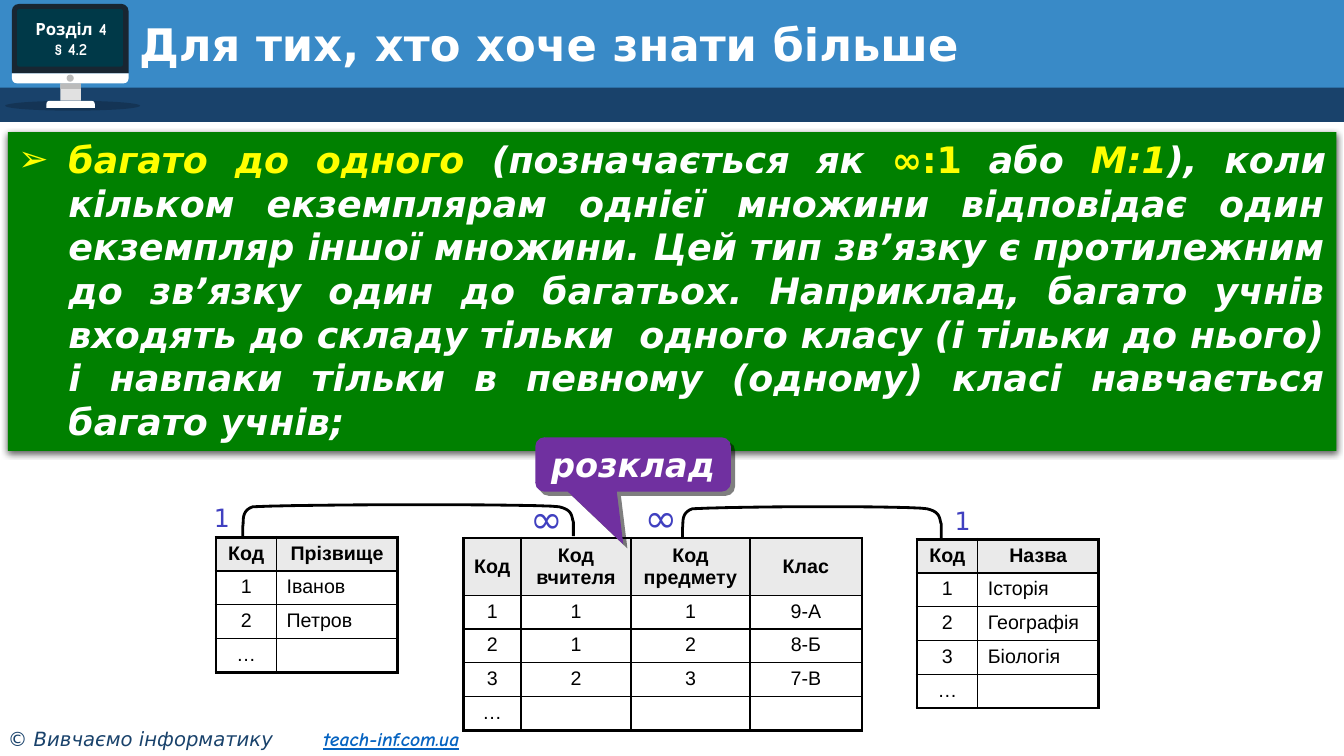
import dataclasses

import lxml.etree
import pptx
import pptx.dml.color
import pptx.enum.shapes
import pptx.enum.text
import pptx.oxml.ns
import pptx.util

Cm, Pt = pptx.util.Cm, pptx.util.Pt
RGB = pptx.dml.color.RGBColor.from_string
SHAPE = pptx.enum.shapes.MSO_SHAPE
ALIGN = pptx.enum.text.PP_ALIGN
ANCHOR = pptx.enum.text.MSO_ANCHOR
qn = pptx.oxml.ns.qn
SubElement = lxml.etree.SubElement


@dataclasses.dataclass(frozen=True)
class Theme:
    face: str = "DejaVu Sans"
    comic: str = "Comic Neue"
    table_face: str = "Arial"
    black: str = "000000"
    white: str = "FFFFFF"
    sky: str = "398AC7"
    navy: str = "19426B"
    casing: str = "182632"
    screen: str = "003948"
    metal: str = "E1E1E1"
    grey: str = "BBBBBB"
    link: str = "0563C1"
    green: str = "008000"
    yellow: str = "FFFF00"
    purple: str = "7030A0"
    mark: str = "4040C0"
    header: str = "EAEAEA"
    title_size: int = 32
    body_size: int = 26
    callout_size: int = 24
    infinity_size: int = 28
    one_size: int = 18
    small_size: int = 14
    badge_size: int = 12


theme = Theme()


def add_panel(parent, preset, left, top, width, height, color):
    shape = parent.shapes.add_shape(preset, Cm(left), Cm(top), Cm(width), Cm(height))
    shape.shadow.inherit = False
    shape.fill.solid()
    shape.fill.fore_color.rgb = RGB(color)
    shape.line.fill.background()
    return shape


def set_font(font, face, size, color, bold=False, italic=False):
    font.name, font.size, font.bold, font.italic = face, Pt(size), bold, italic
    font.color.rgb = RGB(color)


presentation = pptx.Presentation()
presentation.slide_width, presentation.slide_height = Cm(33.87), Cm(19.05)
slide = presentation.slides.add_slide(presentation.slide_layouts[1])
title, body = slide.placeholders[0], slide.placeholders[1]

# Header bands
add_panel(slide, SHAPE.RECTANGLE, 0, 0, 33.87, 2.31, theme.sky)
add_panel(slide, SHAPE.RECTANGLE, 0, 2.21, 33.87, 0.86, theme.navy)

# Monitor with the section number
monitor = slide.shapes.add_group_shape()
floor_shadow = add_panel(monitor, SHAPE.OVAL, 0.13, 2.54, 3.4, 0.25, theme.black)
SubElement(floor_shadow.element.spPr.find(".//" + qn("a:srgbClr")), qn("a:alpha"), val="20000")
case = add_panel(monitor, SHAPE.ROUND_2_SAME_RECTANGLE, 0.3, 0.1, 2.94, 1.75, theme.casing)
case.adjustments[0] = 0.1
chin = add_panel(monitor, SHAPE.ROUND_2_SAME_RECTANGLE, 0.3, 1.85, 2.94, 0.25, theme.white)
chin.adjustments[0] = 0.5
chin.rotation = 180
add_panel(monitor, SHAPE.RECTANGLE, 1.52, 2.1, 0.52, 0.44, theme.metal)
add_panel(monitor, SHAPE.RECTANGLE, 1.52, 2.1, 0.52, 0.14, theme.grey)
add_panel(monitor, SHAPE.ROUND_2_SAME_RECTANGLE, 1.17, 2.54, 1.22, 0.18, theme.white).adjustments[0] = 0.45
add_panel(monitor, SHAPE.OVAL, 1.68, 1.88, 0.18, 0.18, theme.grey)
add_panel(monitor, SHAPE.ROUNDED_RECTANGLE, 0.43, 0.23, 2.67, 1.45, theme.screen).adjustments[0] = 0.04

badge = slide.shapes.add_textbox(Cm(0.33), Cm(0.23), Cm(2.92), Cm(1.5)).text_frame
badge.word_wrap = True
badge.vertical_anchor = ANCHOR.MIDDLE
badge.text = "Розділ 4\n§ 4.2"
for paragraph in badge.paragraphs:
    paragraph.alignment = ALIGN.CENTER
    set_font(paragraph.font, theme.comic, theme.badge_size, theme.white, bold=True)

# Footer
footer = slide.shapes.add_textbox(Cm(0), Cm(18.19), Cm(13.23), Cm(0.86)).text_frame
footer.word_wrap = True
footer.margin_left = Cm(0.2)
paragraph = footer.paragraphs[0]
tabs = SubElement(paragraph._p.get_or_add_pPr(), qn("a:tabLst"))
SubElement(tabs, qn("a:tab"), pos=str(Cm(7.95)), algn="l")
run = paragraph.add_run()
run.text = "© Вивчаємо інформатику\t"
set_font(run.font, theme.face, theme.small_size, theme.navy, italic=True)
run = paragraph.add_run()
run.text = "teach-inf.com.ua"
set_font(run.font, theme.comic, theme.small_size, theme.link, bold=True, italic=True)
run.font.underline = True

# Title and definition, placed above the header bands
for placeholder, box in ((title, (3.25, 0.46, 29.77, 1.47)), (body, (0.2, 3.33, 33.48, 8.03))):
    slide.shapes.element.append(placeholder.element)
    placeholder.left, placeholder.top, placeholder.width, placeholder.height = map(Cm, box)
    placeholder.text_frame.auto_size = pptx.enum.text.MSO_AUTO_SIZE.NONE
    placeholder.text_frame.word_wrap = True

title.text_frame.text = "Для тих, хто хоче знати більше"
title.text_frame.vertical_anchor = ANCHOR.MIDDLE
paragraph = title.text_frame.paragraphs[0]
paragraph.alignment = ALIGN.LEFT
paragraph.line_spacing = 0.9
set_font(paragraph.font, theme.face, theme.title_size, theme.white, bold=True)

body.fill.solid()
body.fill.fore_color.rgb = RGB(theme.green)
body.text_frame.vertical_anchor = ANCHOR.TOP
paragraph = body.text_frame.paragraphs[0]
properties = paragraph._p.get_or_add_pPr()
properties.set("marL", str(Cm(1.27)))
properties.set("indent", str(-Cm(1.27)))
SubElement(properties, qn("a:buChar"), char="➢")
paragraph.alignment = ALIGN.JUSTIFY
paragraph.space_before = Pt(0)
for text, color, italic in (
    ("багато до одного ", theme.yellow, True),
    ("(позначається як ", theme.white, True),
    ("∞:1", theme.yellow, False),
    (" або ", theme.white, True),
    ("М:1", theme.yellow, True),
    ("), коли кільком екземплярам однієї множини відповідає один екземпляр іншої множини. "
     "Цей тип зв’язку є протилежним до зв’язку один до багатьох. Наприклад, багато учнів "
     "входять до складу тільки  одного класу (і тільки до нього) і навпаки тільки в певному "
     "(одному) класі навчається багато учнів;", theme.white, True),
):
    run = paragraph.add_run()
    run.text = text
    set_font(run.font, theme.face, theme.body_size, color, bold=True, italic=italic)

# Tables: thick outer frame, thin inner lines
row_height = 0.85
teachers = [("Код", "Прізвище"), ("1", "Іванов"), ("2", "Петров"), ("…", "")]
subjects = [("Код", "Назва"), ("1", "Історія"), ("2", "Географія"), ("3", "Біологія"), ("…", "")]
timetable = [("Код", "Код вчителя", "Код предмету", "Клас"), ("1", "1", "1", "9-А"),
             ("2", "1", "2", "8-Б"), ("3", "2", "3", "7-В"), ("…", "", "", "")]
for rows, left, top, widths, header_height in (
    (teachers, 5.44, 13.54, (1.53, 3.05), row_height),
    (subjects, 23.11, 13.59, (1.53, 3.05), row_height),
    (timetable, 11.68, 13.56, (1.45, 2.77, 3, 2.82), 1.44),
):
    last_row, last_column = len(rows) - 1, len(widths) - 1
    table = slide.shapes.add_table(len(rows), len(widths), Cm(left), Cm(top), Cm(sum(widths)),
                                   Cm(header_height + last_row * row_height)).table
    table.first_row = table.horz_banding = False
    for column, width in zip(table.columns, widths):
        column.width = Cm(width)
    for r, texts in enumerate(rows):
        table.rows[r].height = Cm(row_height if r else header_height)
        for c, text in enumerate(texts):
            cell = table.cell(r, c)
            cell_properties = cell._tc.get_or_add_tcPr()
            for side, outer in (("L", c == 0), ("R", c == last_column), ("T", r == 0), ("B", r == last_row)):
                border = SubElement(cell_properties, qn("a:ln" + side), w=str(Pt(2.25 if outer else 1)))
                SubElement(SubElement(border, qn("a:solidFill")), qn("a:srgbClr"), val=theme.black)
            if r == 0:
                cell.fill.solid()
                cell.fill.fore_color.rgb = RGB(theme.header)
            else:
                cell.fill.background()
            if rows is timetable and r == 0:
                cell.vertical_anchor = ANCHOR.MIDDLE
            cell.text = text
            paragraph = cell.text_frame.paragraphs[0]
            names = rows is not timetable and r > 0 and c == 1
            paragraph.alignment = ALIGN.LEFT if names else ALIGN.CENTER
            set_font(paragraph.font, theme.table_face, theme.small_size, theme.black, bold=r == 0)
            if not text:
                SubElement(paragraph._p, qn("a:endParaRPr"), sz=str(theme.small_size * 100))

# Curved brackets joining the key columns
for left, right, bottom in ((6.12, 14.45, 13.51), (17.2, 23.72, 13.56)):
    curves = (
        ((left, 0.25), (left + 0.03, 0.38), (left - 0.05, 0.64), (left + 0.25, 0.74)),
        ((left + 0.25, 0.74), (left + 1.57, 0.81), (right - 0.71, 0.81), (right - 0.36, 0.74)),
        ((right - 0.36, 0.74), (right, 0.66), (right - 0.05, 0.48), (right, 0.36)),
    )
    points = []
    for curve in curves:
        for step in range(13):
            t = step / 12
            weights = ((1 - t) ** 3, 3 * t * (1 - t) ** 2, 3 * t * t * (1 - t), t ** 3)
            x, rise = (sum(w * p[axis] for w, p in zip(weights, curve)) for axis in (0, 1))
            points.append((Cm(x), Cm(bottom - rise)))
    builder = slide.shapes.build_freeform(Cm(left), Cm(bottom))
    builder.add_line_segments(points + [(Cm(right), Cm(bottom))], close=False)
    bracket = builder.convert_to_shape()
    bracket.shadow.inherit = False
    bracket.fill.background()
    bracket.line.color.rgb = RGB(theme.black)
    bracket.line.width = Pt(2)

# Callout
callout = add_panel(slide, SHAPE.ROUNDED_RECTANGULAR_CALLOUT, 13.49, 11.02, 4.93, 1.37, theme.purple)
for index, value in enumerate((-0.05, 1.47, 0.17)):
    callout.adjustments[index] = value
callout.text_frame.text = "розклад"
paragraph = callout.text_frame.paragraphs[0]
paragraph.alignment = ALIGN.CENTER
set_font(paragraph.font, theme.face, theme.callout_size, theme.white, bold=True, italic=True)

# Shadows of the definition and the callout
for shape, alpha, blur, distance, angle in ((body, 63, 4.5, 1.5, 90), (callout, 50, 0, 4.2, 45)):
    shape.shadow.inherit = False
    shadow = SubElement(shape.element.spPr.find(qn("a:effectLst")), qn("a:outerShdw"), blurRad=str(Pt(blur)),
                        dist=str(Pt(distance)), dir=str(angle * 60000), algn="ctr", rotWithShape="0")
    color = SubElement(shadow, qn("a:srgbClr"), val=theme.black)
    SubElement(color, qn("a:alpha"), val=str(alpha * 1000))

# Relationship marks
for text, left, top, size in (("∞", 16.23, 12.65, theme.infinity_size), ("∞", 13.34, 12.67, theme.infinity_size),
                              ("1", 5.16, 12.67, theme.one_size), ("1", 23.83, 12.73, theme.one_size)):
    mark = slide.shapes.add_textbox(Cm(left), Cm(top), Cm(0.86), Cm(0.76)).text_frame
    mark.margin_left = mark.margin_right = mark.margin_top = mark.margin_bottom = 0
    mark.word_wrap = False
    mark.vertical_anchor = ANCHOR.MIDDLE
    mark.text = text
    mark.paragraphs[0].alignment = ALIGN.CENTER
    set_font(mark.paragraphs[0].font, theme.face, size, theme.mark)

presentation.save("out.pptx")
